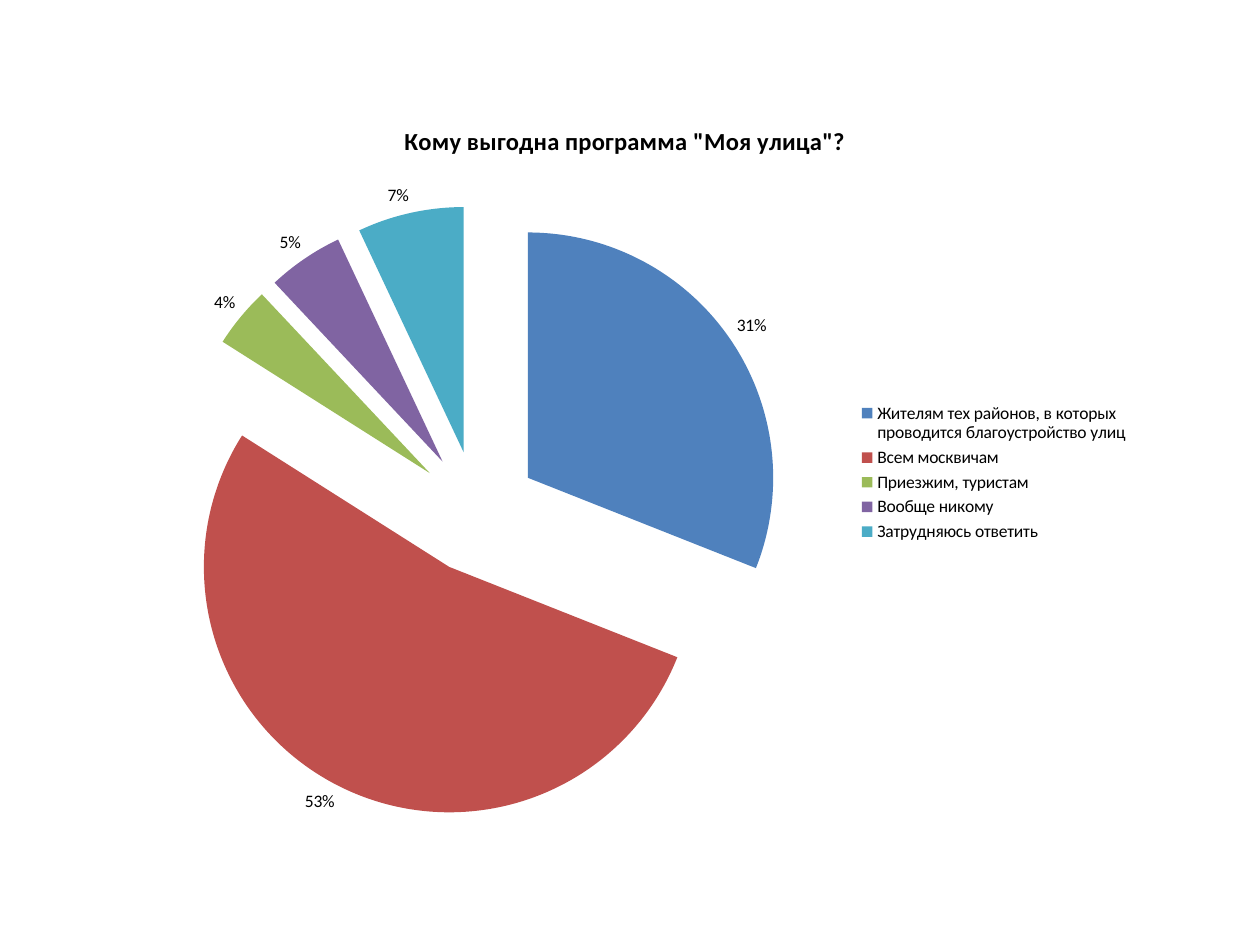
"""Build a slide with an exploded pie chart of survey answers."""
from lxml import etree
from pptx import Presentation
from pptx.chart.data import CategoryChartData
from pptx.dml.color import RGBColor
from pptx.enum.chart import XL_CHART_TYPE as ChartType
from pptx.enum.chart import XL_LABEL_POSITION as LabelPos
from pptx.enum.chart import XL_LEGEND_POSITION as LegendPos
from pptx.oxml.ns import qn
from pptx.util import Inches, Pt

COLORS = {
    "text": "000000",
    "residents": "4F81BD",
    "everyone": "C0504D",
    "visitors": "9BBB59",
    "nobody": "8064A2",
    "unsure": "4BACC6",
}
ANSWERS = [
    ("Жителям тех районов, в которых проводится благоустройство улиц", 0.31, "residents"),
    ("Всем москвичам", 0.53, "everyone"),
    ("Приезжим, туристам", 0.04, "visitors"),
    ("Вообще никому", 0.05, "nobody"),
    ("Затрудняюсь ответить", 0.07, "unsure"),
]


def style_font(font, size, bold=False):
    font.name = "Calibri"
    font.size = Pt(size)
    font.bold = bold
    font.color.rgb = RGBColor.from_string(COLORS["text"])


prs = Presentation()
prs.slide_width, prs.slide_height = Inches(10), Inches(7.5)
s = prs.slides.add_slide(prs.slide_layouts[6])

data = CategoryChartData(number_format="###0%")
data.categories = [name for name, share, color in ANSWERS]
data.add_series("Series 1", [share for name, share, color in ANSWERS])
chart = s.shapes.add_chart(
    ChartType.PIE, Inches(0.86), Inches(0.78), Inches(8.2), Inches(5.94), data
).chart
style_font(chart.font, 10)

chart.has_title = True
tf = chart.chart_title.text_frame
tf.text = 'Кому выгодна программа "Моя улица"?'
style_font(tf.paragraphs[0].runs[0].font, 14, bold=True)
chart.chart_title.include_in_layout = False

chart.has_legend = True
chart.legend.position = LegendPos.RIGHT
chart.legend.include_in_layout = False
style_font(chart.legend.font, 10)

plot = chart.plots[0]
plot.vary_by_categories = True
plot.has_data_labels = True
labels = plot.data_labels
labels.show_value = True
labels.show_percentage = False
labels.number_format = "###0%"
labels.number_format_is_linked = False
labels.position = LabelPos.OUTSIDE_END
style_font(labels.font, 10)

series = plot.series[0]
for i, (name, share, color) in enumerate(ANSWERS):
    fill = series.points[i].format.fill
    fill.solid()
    fill.fore_color.rgb = RGBColor.from_string(COLORS[color])

explosion = etree.Element(qn("c:explosion"), val="25")
series._element.find(qn("c:dPt")).addprevious(explosion)

prs.save("out.pptx")
